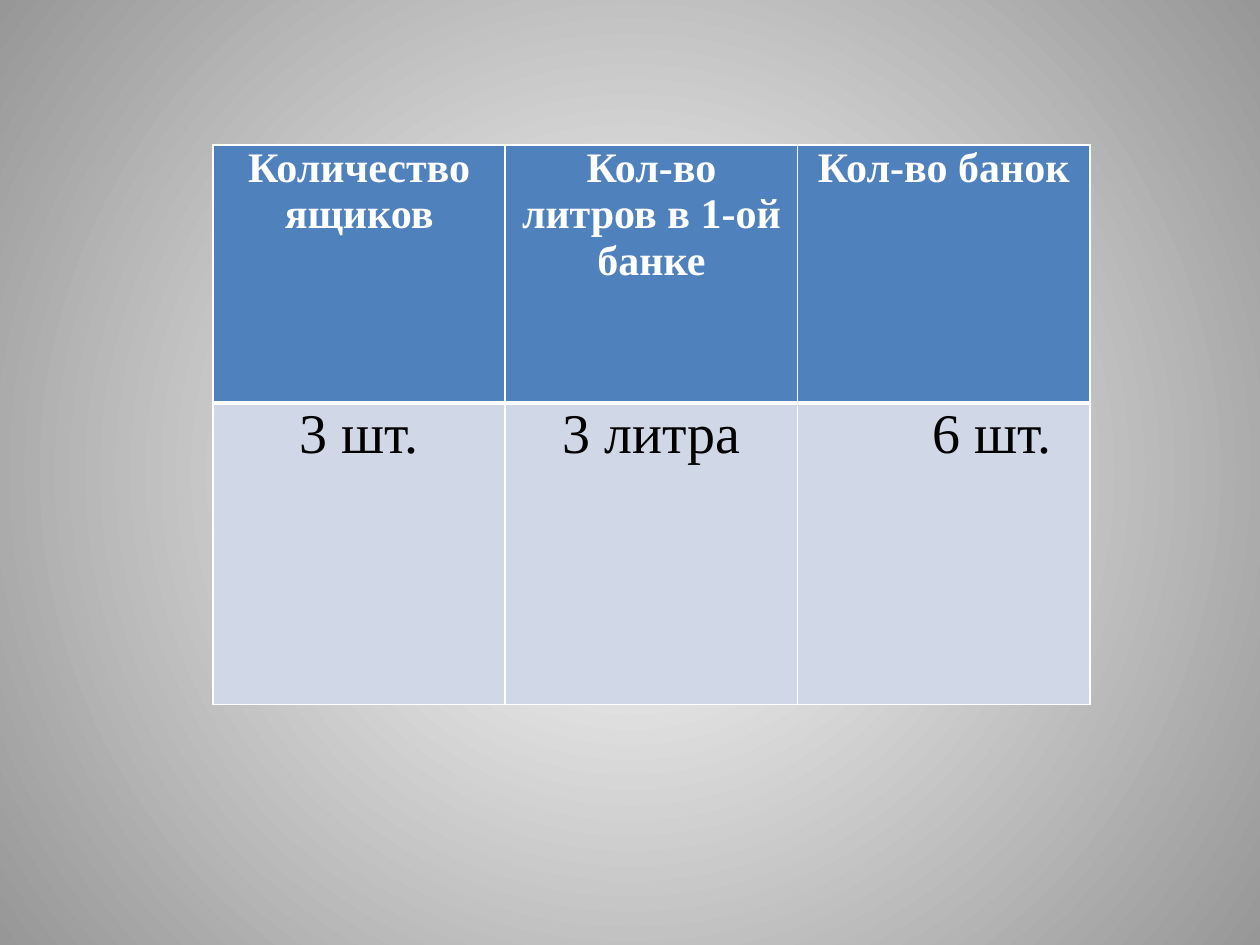
from lxml import etree
from pptx import Presentation, util as u
from pptx.dml.color import RGBColor
from pptx.enum import text as t
from pptx.oxml.ns import qn

# Content: text, then left indent in inches (None means centred)
HEAD = [("Количество ящиков", None), ("Кол-во литров в 1-ой банке", None),
        ("Кол-во банок", None)]
BODY = [("3 шт.", None), ("3 литра", None), ("6 шт.", 1)]

WHITE = RGBColor(0xFF, 0xFF, 0xFF)
BLACK = RGBColor(0, 0, 0)
GREY = RGBColor(0x97, 0x97, 0x97)
BLUE = RGBColor(0x4F, 0x81, 0xBD)
PALE = RGBColor(0xD0, 0xD8, 0xE8)
FONT = "Times New Roman"

# Row format: content, height in inches, text format, fill, bottom and top line in points
ROWS = [
    (HEAD, 2.05, dict(size=24, color=WHITE, bold=True), BLUE, 1, 3),
    (BODY, 2.39, dict(size=32, color=BLACK, bold=False), PALE, 3, 1),
]
LEFT, TOP, COL = 1.69, 1.15, 2.32


def write(frame, words, size, color, bold, indent=None):
    par = frame.paragraphs[0]
    if indent is None:
        par.alignment = t.PP_ALIGN.CENTER
    else:
        par.alignment = t.PP_ALIGN.LEFT
        par._p.get_or_add_pPr().set("marL", str(u.Inches(indent)))
    run = par.add_run()
    run.text = words
    font = run.font
    font.name, font.size, font.bold = FONT, u.Pt(size), bold
    font.color.rgb = color


def border(cell, **widths):
    props = cell._tc.get_or_add_tcPr()
    for pos, side in enumerate("LRTB"):
        line = etree.Element(qn("a:ln" + side), w=str(u.Pt(widths.get(side, 1))))
        fill = etree.SubElement(line, qn("a:solidFill"))
        etree.SubElement(fill, qn("a:srgbClr"), val=str(WHITE))
        props.insert(pos, line)


def backdrop(slide):
    fill = slide.background.fill
    fill.gradient()
    for stop, color in zip(fill.gradient_stops, (WHITE, GREY)):
        stop.color.rgb = color
    grad = slide._element.find(".//" + qn("a:gradFill"))
    grad.remove(grad.find(qn("a:lin")))
    ring = etree.SubElement(grad, qn("a:path"), path="circle")
    etree.SubElement(ring, qn("a:fillToRect"),
                     {side: "50000" for side in "ltrb"})


def main():
    prs = Presentation()
    prs.slide_width, prs.slide_height = u.Inches(10), u.Inches(7.5)
    slide = prs.slides.add_slide(prs.slide_layouts[6])
    backdrop(slide)

    # Table
    high = sum(row[1] for row in ROWS)
    table = slide.shapes.add_table(
        len(ROWS), len(HEAD), u.Inches(LEFT), u.Inches(TOP),
        u.Inches(COL * len(HEAD)), u.Inches(high)).table
    for col in table.columns:
        col.width = u.Inches(COL)

    # Cells
    for r, (items, tall, style, fill, above, below) in enumerate(ROWS):
        table.rows[r].height = u.Inches(tall)
        for c, (words, indent) in enumerate(items):
            cell = table.cell(r, c)
            cell.margin_left = cell.margin_right = u.Inches(0.07)
            cell.margin_top = cell.margin_bottom = 0
            cell.fill.solid()
            cell.fill.fore_color.rgb = fill
            border(cell, T=above, B=below)
            write(cell.text_frame, words, indent=indent, **style)

    prs.save("out.pptx")


if __name__ == "__main__":
    main()
